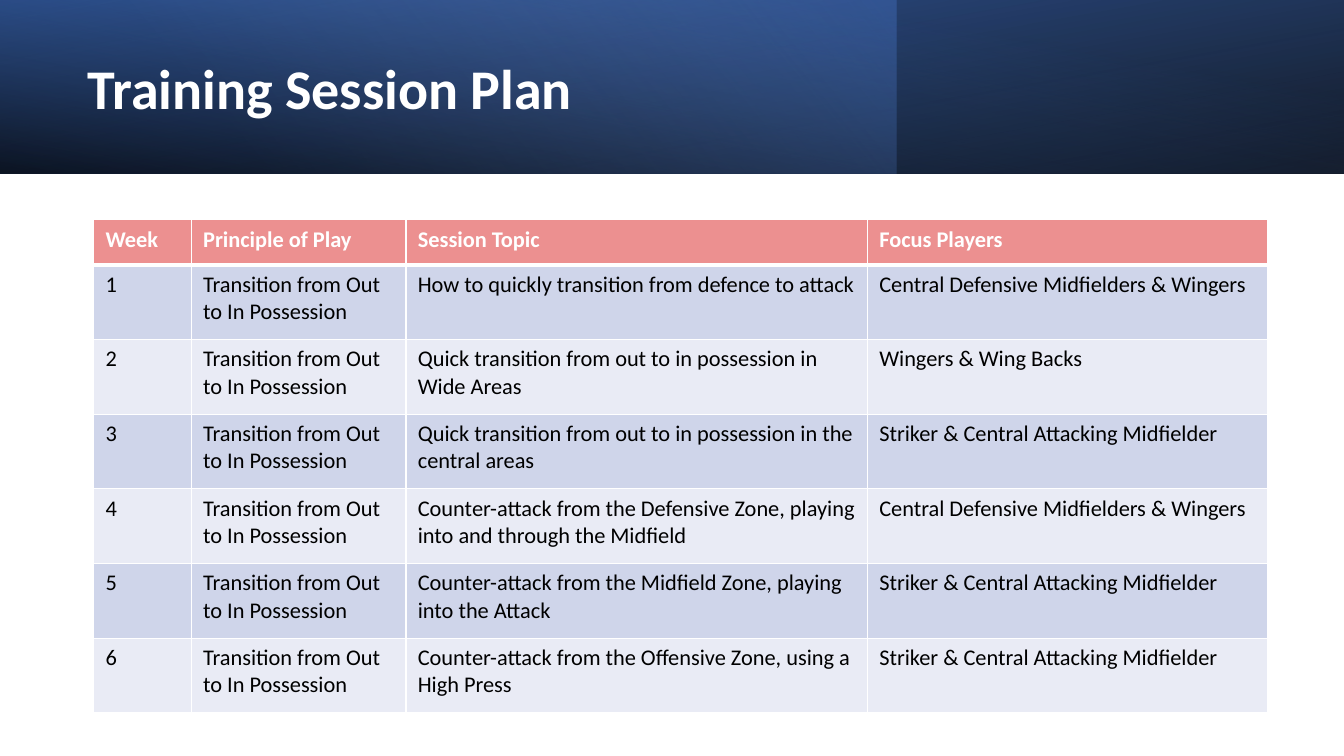
import dataclasses
import typing

import lxml.etree
import pptx
import pptx.dml.color
import pptx.enum.shapes
import pptx.enum.text
import pptx.oxml.ns
import pptx.slide
import pptx.table
import pptx.text.text
import pptx.util

Cm = pptx.util.Cm
Pt = pptx.util.Pt
RGB = pptx.dml.color.RGBColor
qn = pptx.oxml.ns.qn

BLACK = RGB(0x00, 0x00, 0x00)
WHITE = RGB(0xFF, 0xFF, 0xFF)
NAVY = RGB(0x2F, 0x55, 0x97)
BLUE = RGB(0x44, 0x72, 0xC4)
SKY = RGB(0x8F, 0xAA, 0xDC)
CORAL = RGB(0xEC, 0x90, 0x90)
BANDS = (RGB(0xE9, 0xEB, 0xF5), RGB(0xCF, 0xD5, 0xEA))

WIDE, HIGH = Cm(33.87), Cm(19.05)


class Stop(typing.NamedTuple):
    place: float
    color: RGB
    alpha: int


@dataclasses.dataclass
class Panel:
    width: float
    angle: int  # clockwise degrees
    stops: tuple[Stop, Stop]
    flip: bool = False
    turn: int = 0


class Week(typing.NamedTuple):
    topic: str
    focus: str


PANELS = (
    Panel(33.87, 100, (Stop(0, BLACK, 96), Stop(1, NAVY, 100)), True, 180),
    Panel(22.58, 140, (Stop(0, BLUE, 41), Stop(0.74, SKY, 0))),
    Panel(33.87, 260, (Stop(0, BLACK, 63), Stop(0.78, BLUE, 15)), True),
)

HEADS = ("Week", "Principle of Play", "Session Topic", "Focus Players")
MOVE = "Transition from Out to In Possession"
MIDS = "Central Defensive Midfielders & Wingers"
FRONT = "Striker & Central Attacking Midfielder"
WEEKS = (
    Week("How to quickly transition from defence to attack", MIDS),
    Week("Quick transition from out to in possession in Wide Areas",
         "Wingers & Wing Backs"),
    Week("Quick transition from out to in possession in the central areas", FRONT),
    Week("Counter-attack from the Defensive Zone, playing into and through the Midfield",
         MIDS),
    Week("Counter-attack from the Midfield Zone, playing into the Attack", FRONT),
    Week("Counter-attack from the Offensive Zone, using a High Press", FRONT),
)
COLS = (2.46, 5.41, 11.63, 10.08)
HEAD_ROW, WEEK_ROW = 1.14, 1.88

TITLE = {"name": "Calibri", "size": Pt(40), "bold": True}
HEAD = {"name": "Calibri", "size": Pt(16), "bold": True}
BODY = HEAD | {"bold": False}
INSETS = {"margin_left": Cm(0.3), "margin_right": Cm(0.3),
          "margin_top": Cm(0.15), "margin_bottom": Cm(0.15)}
PLAIN = {"first_row": True, "horz_banding": False}


def apply(item: object, values: dict) -> None:
    for key, value in values.items():
        setattr(item, key, value)


def write(frame: pptx.text.text.TextFrame, text: str, style: dict, color: RGB) -> None:
    run = frame.paragraphs[0].add_run()
    run.text = text
    apply(run.font, style)
    run.font.color.rgb = color


def draw_panel(slide: pptx.slide.Slide, panel: Panel) -> None:
    kind = pptx.enum.shapes.MSO_SHAPE.RECTANGLE
    shape = slide.shapes.add_shape(kind, 0, 0, Cm(panel.width), Cm(4.37))
    shape.shadow.inherit = False
    shape.line.fill.background()
    shape.rotation = panel.turn
    props = shape._element.spPr
    if panel.flip:
        props.find(qn("a:xfrm")).set("flipH", "1")
    shape.fill.gradient()
    shape.fill.gradient_angle = 360 - panel.angle
    for mark, stop in zip(shape.fill.gradient_stops, panel.stops):
        mark.position = stop.place
        mark.color.rgb = stop.color
    for node, stop in zip(props.iter(qn("a:srgbClr")), panel.stops):
        lxml.etree.SubElement(node, qn("a:alpha"), val=str(stop.alpha * 1000))


def draw_edges(cell: pptx.table._Cell, top: int, base: int) -> None:
    props = cell._tc.get_or_add_tcPr()
    edges = {"a:lnL": 1, "a:lnR": 1, "a:lnT": top, "a:lnB": base}
    for spot, (tag, width) in enumerate(edges.items()):
        line = lxml.etree.Element(qn(tag), w=str(Pt(width)))
        fill = lxml.etree.SubElement(line, qn("a:solidFill"))
        lxml.etree.SubElement(fill, qn("a:srgbClr"), val=str(WHITE))
        props.insert(spot, line)


def draw_table(slide: pptx.slide.Slide) -> None:
    rows = [HEADS] + [(str(n), MOVE, *week) for n, week in enumerate(WEEKS, 1)]
    tall = HEAD_ROW + WEEK_ROW * len(WEEKS)
    table = slide.shapes.add_table(len(rows), len(COLS), Cm(2.36), Cm(5.54),
                                   Cm(sum(COLS)), Cm(tall)).table
    apply(table, PLAIN)
    for col, width in zip(table.columns, COLS):
        col.width = Cm(width)
    for y, texts in enumerate(rows):
        head = y == 0
        table.rows[y].height = Cm(HEAD_ROW if head else WEEK_ROW)
        for x, text in enumerate(texts):
            cell = table.cell(y, x)
            apply(cell, INSETS)
            cell.fill.solid()
            cell.fill.fore_color.rgb = CORAL if head else BANDS[y % 2]
            draw_edges(cell, 3 if y == 1 else 1, 3 if head else 1)
            write(cell.text_frame, text, HEAD if head else BODY,
                  WHITE if head else BLACK)


def draw_title(slide: pptx.slide.Slide) -> None:
    box = slide.shapes.add_textbox(Cm(1.96), Cm(0.69), Cm(19.61), Cm(3.23))
    frame = box.text_frame
    frame.word_wrap = True
    frame.vertical_anchor = pptx.enum.text.MSO_ANCHOR.MIDDLE
    frame.paragraphs[0].line_spacing = 0.9
    write(frame, "Training Session Plan", TITLE, WHITE)


def main() -> None:
    deck = pptx.Presentation()
    apply(deck, {"slide_width": WIDE, "slide_height": HIGH})
    slide = deck.slides.add_slide(deck.slide_layouts[6])

    # Banner
    for panel in PANELS:
        draw_panel(slide, panel)
    draw_title(slide)

    # Weekly plan
    draw_table(slide)
    deck.save("out.pptx")


if __name__ == "__main__":
    main()
